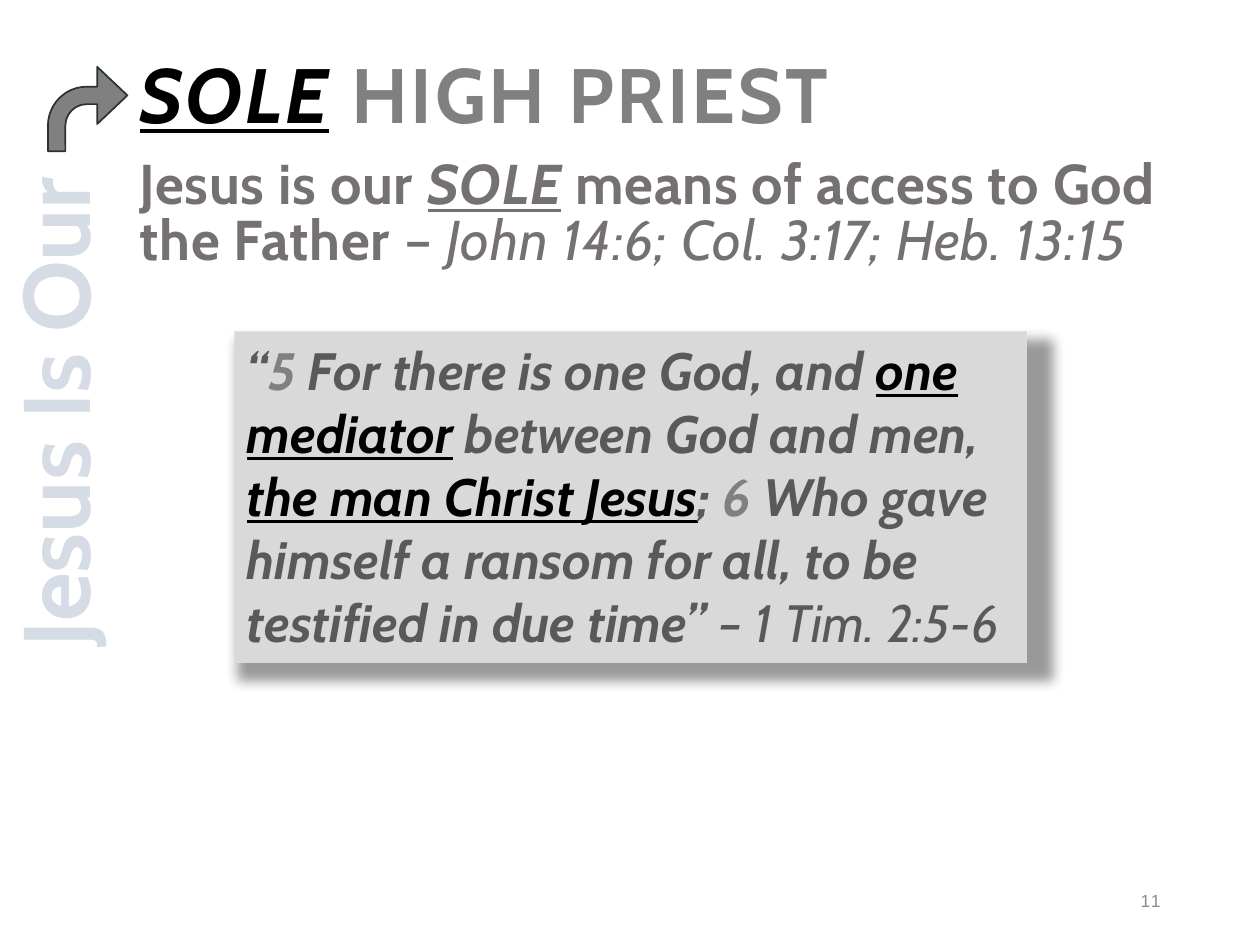
from lxml import etree
from pptx import Presentation
from pptx.dml.color import RGBColor
from pptx.enum.dml import MSO_PATTERN
from pptx.enum.shapes import MSO_SHAPE
from pptx.enum.text import MSO_ANCHOR, PP_ALIGN
from pptx.oxml import parse_xml
from pptx.oxml.ns import nsdecls
from pptx.util import Pt

LEFT, CENTER, RIGHT = PP_ALIGN.LEFT, PP_ALIGN.CENTER, PP_ALIGN.RIGHT
TOP, MIDDLE, BOTTOM = MSO_ANCHOR.TOP, MSO_ANCHOR.MIDDLE, MSO_ANCHOR.BOTTOM
RECTANGLE, BENT_ARROW = MSO_SHAPE.RECTANGLE, MSO_SHAPE.BENT_ARROW
DIAGONAL = MSO_PATTERN.DARK_UPWARD_DIAGONAL

COLORS = {
    "black": "000000",
    "gray": "808080",
    "verse": "595959",
    "body": "767171",
    "panel": "D9D9D9",
    "arrow_line": "2B3232",
    "number": "8C8C8C",
    "stripe": "44546A",
    "pale": "D6DCE5",
    "outline": "333F50",
}


def rgb(name):
    return RGBColor.from_string(COLORS[name])


def add_box(slide, left, top, width, height):
    return slide.shapes.add_textbox(Pt(left), Pt(top), Pt(width), Pt(height))


def add_filled_shape(slide, kind, left, top, width, height, color):
    shape = slide.shapes.add_shape(kind, Pt(left), Pt(top), Pt(width), Pt(height))
    shape.shadow.inherit = False
    shape.fill.solid()
    shape.fill.fore_color.rgb = rgb(color)
    shape.line.fill.background()
    return shape


def write_text(shape, runs, size, color, font="Cabin", bold=True, italic=False,
               spacing=0, align=LEFT, anchor=TOP, wrap=True,
               line_spacing=None, space_before=0):
    """Fill the shape with one paragraph; each run is (text, format changes)."""
    frame = shape.text_frame
    frame.word_wrap = wrap
    frame.vertical_anchor = anchor
    paragraph = frame.paragraphs[0]
    paragraph.alignment = align
    paragraph.line_spacing = line_spacing
    paragraph.space_before = Pt(space_before)
    for text, changes in runs:
        run = paragraph.add_run()
        run.text = text
        run.font.name = font
        run.font.size = Pt(size)
        run.font.bold = changes.get("bold", bold)
        run.font.italic = changes.get("italic", italic)
        run.font.underline = changes.get("underline", False)
        run.font.color.rgb = rgb(changes.get("color", color))
        if spacing:
            run.font._element.set("spc", str(round(spacing * 100)))
    return paragraph


def add_panel_shadow(shape):
    effects = shape._element.spPr.find("{*}effectLst")
    shadow = parse_xml(
        f'<a:outerShdw {nsdecls("a")} blurRad="{Pt(7)}" dist="{Pt(5)}" dir="4200000"'
        ' sx="103000" sy="103000" algn="tl" rotWithShape="0"/>')
    color = etree.SubElement(shadow, shadow.tag.replace("outerShdw", "srgbClr"),
                             val=COLORS["black"])
    etree.SubElement(color, shadow.tag.replace("outerShdw", "alpha"), val="40000")
    effects.append(shadow)


def add_side_label(slide):
    label = add_box(slide, -118.8, 193, 298.8, 72.7)
    label.rotation = 270
    paragraph = write_text(label, [("Jesus Is Our ", {})], 54, "pale",
                           align=CENTER, wrap=False)
    font = paragraph.runs[0].font
    font.fill.patterned()
    font.fill.pattern = DIAGONAL
    font.fill.fore_color.rgb = rgb("stripe")
    font.fill.back_color.rgb = rgb("pale")
    outline = parse_xml(
        f'<a:ln {nsdecls("a")} w="{Pt(1)}"><a:solidFill>'
        f'<a:srgbClr val="{COLORS["outline"]}"/></a:solidFill></a:ln>')
    font._element.insert(0, outline)


def add_arrow(slide):
    arrow = add_filled_shape(slide, BENT_ARROW, 27.4, 38.2, 45.4, 48.2, "gray")
    for index, value in enumerate((0.22, 0.36, 0.38, 0.49)):
        arrow.adjustments[index] = value
    arrow.line.color.rgb = rgb("arrow_line")
    arrow.line.width = Pt(1)


def add_verse(slide):
    panel = add_filled_shape(slide, RECTANGLE, 133.9, 189.4, 452.9, 189.4, "panel")
    add_panel_shadow(panel)
    key = {"color": "black", "underline": True}
    number = {"color": "gray"}
    write_text(panel, [
        ("“", {}),
        ("5", number),
        (" For there is one God, and ", {}),
        ("one mediator", key),
        (" between God and men, ", {}),
        ("the man Christ Jesus", key),
        (";", {}),
        (" 6 ", number),
        ("Who gave himself a ransom for all, to be testified in due time” ", {}),
        ("– 1 Tim. 2:5-6", {"bold": False}),
    ], 30, "verse", italic=True)


def main():
    presentation = Presentation()
    presentation.slide_width, presentation.slide_height = Pt(720), Pt(540)
    slide = presentation.slides.add_slide(presentation.slide_layouts[6])

    sole = {"italic": True, "underline": True}
    write_text(add_box(slide, 72.7, 25.9, 570.2, 57.6), [
        ("SOLE", {**sole, "color": "black"}),
        (" HIGH PRIEST", {}),
    ], 44, "gray", spacing=1.5, anchor=BOTTOM, line_spacing=0.9)
    write_text(add_box(slide, 72.7, 87.8, 604.8, 425.5), [
        ("Jesus is our ", {}),
        ("SOLE", sole),
        (" means of access to God the Father ", {}),
        ("– ", {"bold": False}),
        ("John 14:6; Col. 3:17; Heb. 13:15", {"bold": False, "italic": True}),
    ], 32, "body", spacing=0.4, line_spacing=Pt(32), space_before=6)
    add_side_label(slide)
    add_arrow(slide)
    add_verse(slide)
    write_text(add_box(slide, 508.3, 500.4, 162, 28.8), [("11", {})], 10, "number",
               font="Arial", bold=False, spacing=1.1, align=RIGHT, anchor=MIDDLE)
    presentation.save("out.pptx")


if __name__ == "__main__":
    main()
